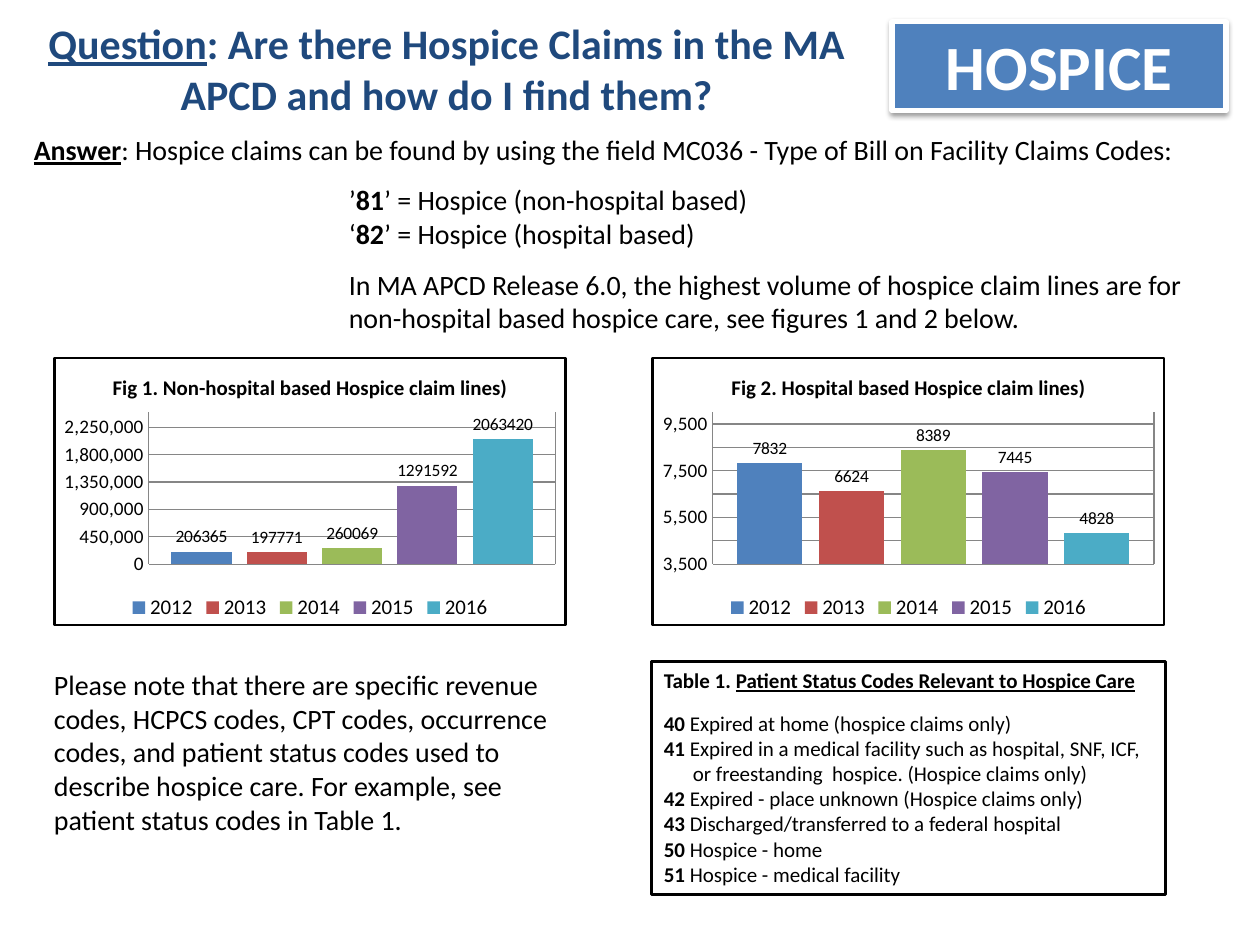
from dataclasses import dataclass

from lxml import etree
from pptx import Presentation
from pptx.chart.data import CategoryChartData
from pptx.dml.color import RGBColor
from pptx.enum.chart import XL_CHART_TYPE as ChartType
from pptx.enum.chart import XL_LABEL_POSITION as LabelPosition
from pptx.enum.chart import XL_LEGEND_POSITION as LegendPosition
from pptx.enum.chart import XL_TICK_MARK as TickMark
from pptx.enum.shapes import MSO_SHAPE as ShapeType
from pptx.enum.text import MSO_ANCHOR as Anchor
from pptx.enum.text import PP_ALIGN as Align
from pptx.oxml import parse_xml
from pptx.oxml.ns import qn
from pptx.util import Inches, Pt

FONT = "Calibri"
COLORS = {"navy": "1F497D", "blue": "4F81BD", "white": "FFFFFF", "black": "000000", "grid": "868686"}
YEAR_COLORS = {"2012": "4F81BD", "2013": "C0504D", "2014": "9BBB59", "2015": "8064A2", "2016": "4BACC6"}
DRAWING_NS = "http://schemas.openxmlformats.org/drawingml/2006/main"
CHART_NS = "http://schemas.openxmlformats.org/drawingml/2006/chart"
GAP = 9.8  # points between text groups


@dataclass
class Run:
    text: str
    bold: bool = False
    underline: bool = False


@dataclass
class Line:
    runs: list[Run]
    indent: float = 0
    space_before: float = 0


@dataclass
class Figure:
    title: str
    left: float
    values: list[int]
    minimum: int
    maximum: int
    step: int


def rgb(name: str) -> RGBColor:
    return RGBColor.from_string(COLORS[name])


def style_font(font, size: float, color: str = "black", bold: bool | None = None) -> None:
    font.name, font.size, font.bold = FONT, Pt(size), bold
    font.color.rgb = rgb(color)


def write_lines(shape, lines: list[Line], size: float, color: str = "black",
                align: Align = Align.LEFT, anchor: Anchor = Anchor.TOP) -> None:
    frame = shape.text_frame
    frame.word_wrap = True
    frame.vertical_anchor = anchor
    for index, line in enumerate(lines):
        paragraph = frame.paragraphs[0] if index == 0 else frame.add_paragraph()
        paragraph.alignment = align
        if line.indent:
            properties = paragraph._p.get_or_add_pPr()
            properties.set("marL", str(Inches(line.indent)))
            properties.set("indent", "0")
        if line.space_before:
            paragraph.space_before = Pt(line.space_before)
        style_font(paragraph.font, size, color)
        for part in line.runs:
            run = paragraph.add_run()
            run.text = part.text
            if part.bold:
                run.font.bold = True
            if part.underline:
                run.font.underline = True


def add_text(slide, left: float, top: float, width: float, height: float, lines: list[Line], size: float, **style):
    box = slide.shapes.add_textbox(Inches(left), Inches(top), Inches(width), Inches(height))
    write_lines(box, lines, size, **style)


def add_box(slide, left: float, top: float, width: float, height: float, line_color: str, line_width: float):
    box = slide.shapes.add_shape(ShapeType.RECTANGLE, Inches(left), Inches(top), Inches(width), Inches(height))
    box.shadow.inherit = False
    box.fill.background()
    box.line.color.rgb = rgb(line_color)
    box.line.width = Pt(line_width)
    return box


def add_drop_shadow(shape) -> None:
    effects = shape._element.spPr.find(qn("a:effectLst"))
    shadow = etree.SubElement(effects, qn("a:outerShdw"), blurRad=str(Pt(3.1)), dist=str(Pt(1.6)),
                              dir="5400000", rotWithShape="0")
    color = etree.SubElement(shadow, qn("a:srgbClr"), val=COLORS["black"])
    etree.SubElement(color, qn("a:alpha"), val="38000")


def add_figure(slide, figure: Figure) -> None:
    data = CategoryChartData()
    data.categories = ["1"]
    for year, value in zip(YEAR_COLORS, figure.values):
        data.add_series(year, [value])
    chart = slide.shapes.add_chart(ChartType.COLUMN_CLUSTERED, Inches(figure.left), Inches(2.83),
                                   Inches(4.08), Inches(2.14), data).chart
    style_font(chart.font, 18)

    # Title and legend
    chart.has_title = True
    title = chart.chart_title
    title.include_in_layout = False
    paragraph = title.text_frame.paragraphs[0]
    style_font(paragraph.font, 12, bold=True)
    paragraph.add_run().text = figure.title
    chart.has_legend = True
    chart.legend.position = LegendPosition.BOTTOM
    chart.legend.include_in_layout = False
    style_font(chart.legend.font, 12)

    # Axes
    chart.category_axis.visible = False
    axis = chart.value_axis
    axis.minimum_scale, axis.maximum_scale, axis.major_unit = figure.minimum, figure.maximum, figure.step
    axis.major_tick_mark = TickMark.NONE
    axis.tick_labels.number_format = "#,##0"
    axis.tick_labels.number_format_is_linked = False
    style_font(axis.tick_labels.font, 11)
    axis.format.line.fill.background()
    for gridded in (chart.category_axis, axis):
        gridded.has_major_gridlines = True
        gridded.major_gridlines.format.line.color.rgb = rgb("grid")
        gridded.major_gridlines.format.line.width = Pt(0.75)

    # Bars
    plot = chart.plots[0]
    plot.vary_by_categories = False
    plot.gap_width, plot.overlap = 75, -25
    for series, color in zip(plot.series, YEAR_COLORS.values()):
        series.format.fill.solid()
        series.format.fill.fore_color.rgb = RGBColor.from_string(color)
        labels = series.data_labels
        labels.show_value = True
        labels.position = LabelPosition.OUTSIDE_END
        style_font(labels.font, 10)

    # Frame around the chart
    chart._chartSpace.find(qn("c:chart")).addnext(parse_xml(
        f'<c:spPr xmlns:c="{CHART_NS}" xmlns:a="{DRAWING_NS}"><a:noFill/><a:ln w="{Pt(1.5)}"><a:solidFill>'
        f'<a:srgbClr val="{COLORS["black"]}"/></a:solidFill></a:ln></c:spPr>'))


ANSWER = [
    Line([Run("Answer", True, True),
          Run(": Hospice claims can be found by using the field MC036 - Type of Bill on Facility Claims Codes:")]),
    Line([Run("’"), Run("81", True), Run("’ = Hospice (non-hospital based)")], 2.5, GAP),
    Line([Run("‘"), Run("82", True), Run("’ = Hospice (hospital based)")], 2.5),
    Line([Run("In MA APCD Release 6.0, the highest volume of hospice claim lines are for "
              "non-hospital based hospice care, see figures 1 and 2 below.")], 2.5, GAP),
]
NOTE = ("Please note that there are specific revenue codes, HCPCS codes, CPT codes, occurrence codes, and patient "
        "status codes used to describe hospice care. For example, see patient status codes in Table 1.")
STATUS_CODES = [
    Line([Run("Table 1. ", True), Run("Patient Status Codes Relevant to Hospice Care", True, True)]),
    Line([Run("40 ", True), Run("Expired at home (hospice claims only)")], space_before=GAP),
    Line([Run("41", True), Run(" Expired in a medical facility such as hospital, SNF, ICF,")]),
    Line([Run("or freestanding  hospice. (Hospice claims only)")], 0.23),
    Line([Run("42", True), Run(" Expired - place unknown (Hospice claims only)")]),
    Line([Run("43", True), Run(" Discharged/transferred to a federal hospital")]),
    Line([Run("50", True), Run(" Hospice - home")]),
    Line([Run("51", True), Run(" Hospice - medical facility")]),
]
FIGURES = [
    Figure("Fig 1. Non-hospital based Hospice claim lines)", 0.42,
           [206365, 197771, 260069, 1291592, 2063420], 0, 2500000, 450000),
    Figure("Fig 2. Hospital based Hospice claim lines)", 5.17,
           [7832, 6624, 8389, 7445, 4828], 3500, 10000, 1000),
]


def main() -> None:
    presentation = Presentation()
    presentation.slide_width, presentation.slide_height = Inches(10), Inches(7.5)
    slide = presentation.slides.add_slide(presentation.slide_layouts[6])

    # Question and topic badge
    question = Line([Run("Question", True, True),
                     Run(": Are there Hospice Claims in the MA APCD and how do I find them?", True)])
    add_text(slide, 0.17, 0, 6.75, 1.08, [question], 24, color="navy", align=Align.CENTER, anchor=Anchor.MIDDLE)
    badge = add_box(slide, 7.08, 0.17, 2.65, 0.71, "white", 3)
    badge.fill.solid()
    badge.fill.fore_color.rgb = rgb("blue")
    add_drop_shadow(badge)
    write_lines(badge, [Line([Run("HOSPICE", True)])], 36, "white", Align.CENTER)

    # Answer and figures
    add_text(slide, 0.17, 1, 9.41, 1.72, ANSWER, 16)
    for figure in FIGURES:
        add_figure(slide, figure)

    # Note and status codes
    add_text(slide, 0.33, 5.25, 4.25, 1.45, [Line([Run(NOTE)])], 16)
    write_lines(add_box(slide, 5.17, 5.25, 4.08, 1.85, "black", 1.5), STATUS_CODES, 12)

    presentation.save("out.pptx")


if __name__ == "__main__":
    main()
